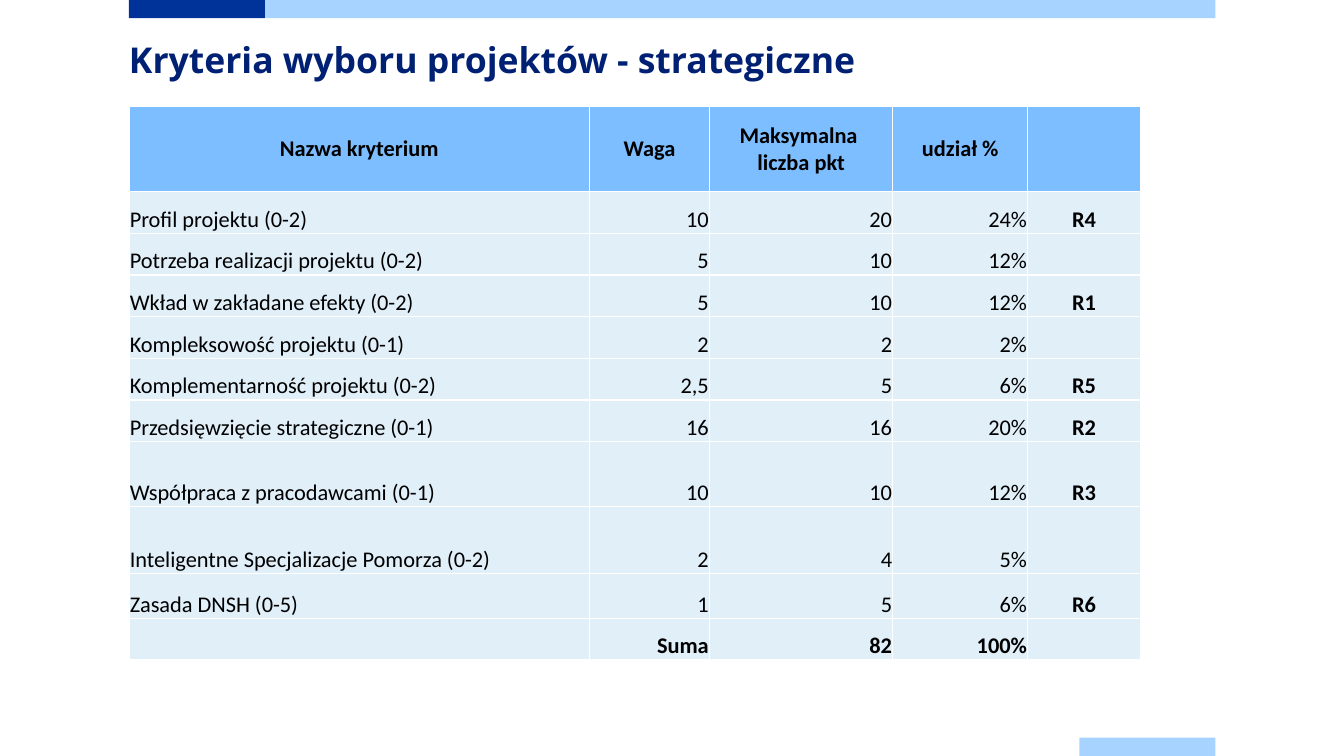
import pptx
import pptx.dml.color
import pptx.enum.shapes
import pptx.enum.text
import pptx.oxml
import pptx.oxml.ns
import pptx.util
from pptx.util import Cm

COLOURS = {
    "navy": "003399",
    "sky": "A6D3FF",
    "title": "002073",
    "header": "7CBEFF",
    "body": "E1EFF9",
    "border": "FFFFFF",
    "text": "000000",
}
LEFT = 3.25
COLUMN_WIDTHS = [11.61, 3.02, 4.62, 3.4, 2.84]
ROW_HEIGHTS = [2.16] + [1.05] * 6 + [1.63, 1.7, 1.12, 1.05]
CRITERIA = [
    ["Nazwa kryterium", "Waga", "Maksymalna \nliczba pkt", "udział %", ""],
    ["Profil projektu (0-2)", "10", "20", "24%", "R4"],
    ["Potrzeba realizacji projektu (0-2)", "5", "10", "12%", ""],
    ["Wkład w zakładane efekty (0-2)", "5", "10", "12%", "R1"],
    ["Kompleksowość projektu (0-1)", "2", "2", "2%", ""],
    ["Komplementarność projektu (0-2)", "2,5", "5", "6%", "R5"],
    ["Przedsięwzięcie strategiczne (0-1)", "16", "16", "20%", "R2"],
    ["Współpraca z pracodawcami (0-1)", "10", "10", "12%", "R3"],
    ["Inteligentne Specjalizacje Pomorza (0-2)", "2", "4", "5%", ""],
    ["Zasada DNSH (0-5)", "1", "5", "6%", "R6"],
    ["", "Suma", "82", "100%", ""],
]


def colour(name):
    """Return the named colour."""
    return pptx.dml.color.RGBColor.from_string(COLOURS[name])


def style_font(font, family, size, bold, colour_name):
    """Apply family, size, weight and colour to a font."""
    font.name = family
    font.size = pptx.util.Pt(size)
    font.bold = bold
    font.color.rgb = colour(colour_name)


def add_bar(slide, left, top, width, colour_name):
    """Add a plain decorative bar."""
    bar = slide.shapes.add_shape(
        pptx.enum.shapes.MSO_SHAPE.RECTANGLE, Cm(left), Cm(top), Cm(width), Cm(0.46))
    bar.shadow.inherit = False
    bar.fill.solid()
    bar.fill.fore_color.rgb = colour(colour_name)
    bar.line.fill.background()


def add_title(slide, text):
    """Add the slide heading."""
    box = slide.shapes.add_textbox(Cm(LEFT), Cm(0.89), Cm(27.38), Cm(1.4))
    frame = box.text_frame
    frame.word_wrap = True
    frame.margin_left = frame.margin_right = frame.margin_top = frame.margin_bottom = 0
    frame.text = text
    paragraph = frame.paragraphs[0]
    paragraph.line_spacing = pptx.util.Pt(32.7)
    style_font(paragraph.runs[0].font, "Open Sans", 25.4, True, "title")


def set_borders(cell):
    """Draw a thin line on every side of a cell."""
    properties = cell._tc.get_or_add_tcPr()
    for index, side in enumerate(("lnL", "lnR", "lnT", "lnB")):
        properties.insert(index, pptx.oxml.parse_xml(
            f'<a:{side} {pptx.oxml.ns.nsdecls("a")} w="12700"><a:solidFill>'
            f'<a:srgbClr val="{COLOURS["border"]}"/></a:solidFill></a:{side}>'))


def fill_cell(cell, text, alignment, bold, header):
    """Write and style one table cell."""
    anchors = pptx.enum.text.MSO_ANCHOR
    cell.margin_left = cell.margin_right = cell.margin_top = Cm(0.02)
    cell.margin_bottom = 0
    cell.vertical_anchor = anchors.MIDDLE if header else anchors.BOTTOM
    cell.fill.solid()
    cell.fill.fore_color.rgb = colour("header" if header else "body")
    set_borders(cell)
    cell.text_frame.text = text
    for paragraph in cell.text_frame.paragraphs:
        paragraph.alignment = alignment
        for target in paragraph.runs or [paragraph]:
            style_font(target.font, "Calibri", 16, bold, "text")


def add_criteria_table(slide):
    """Add the table of selection criteria."""
    table = slide.shapes.add_table(
        len(ROW_HEIGHTS), len(COLUMN_WIDTHS), Cm(LEFT), Cm(2.67),
        Cm(sum(COLUMN_WIDTHS)), Cm(sum(ROW_HEIGHTS))).table
    for column, width in zip(table.columns, COLUMN_WIDTHS):
        column.width = Cm(width)
    for row, height in zip(table.rows, ROW_HEIGHTS):
        row.height = Cm(height)
    align = pptx.enum.text.PP_ALIGN
    body_alignments = [align.LEFT] + [align.RIGHT] * 3 + [align.CENTER]
    last_row, last_column = len(CRITERIA) - 1, len(COLUMN_WIDTHS) - 1
    for row_index, values in enumerate(CRITERIA):
        header = row_index == 0
        for column_index, text in enumerate(values):
            alignment = align.CENTER if header else body_alignments[column_index]
            bold = row_index in (0, last_row) or column_index == last_column
            fill_cell(table.cell(row_index, column_index), text, alignment, bold, header)


def main():
    """Build and save the slide."""
    presentation = pptx.Presentation()
    presentation.slide_width = Cm(33.87)
    presentation.slide_height = Cm(19.05)
    slide = presentation.slides.add_slide(presentation.slide_layouts[6])
    add_bar(slide, LEFT, 0, 3.43, "navy")
    add_bar(slide, 6.68, 0, 23.95, "sky")
    add_bar(slide, 27.2, 18.59, 3.43, "sky")
    add_criteria_table(slide)
    add_title(slide, "Kryteria wyboru projektów - strategiczne")
    presentation.save("out.pptx")


if __name__ == "__main__":
    main()
